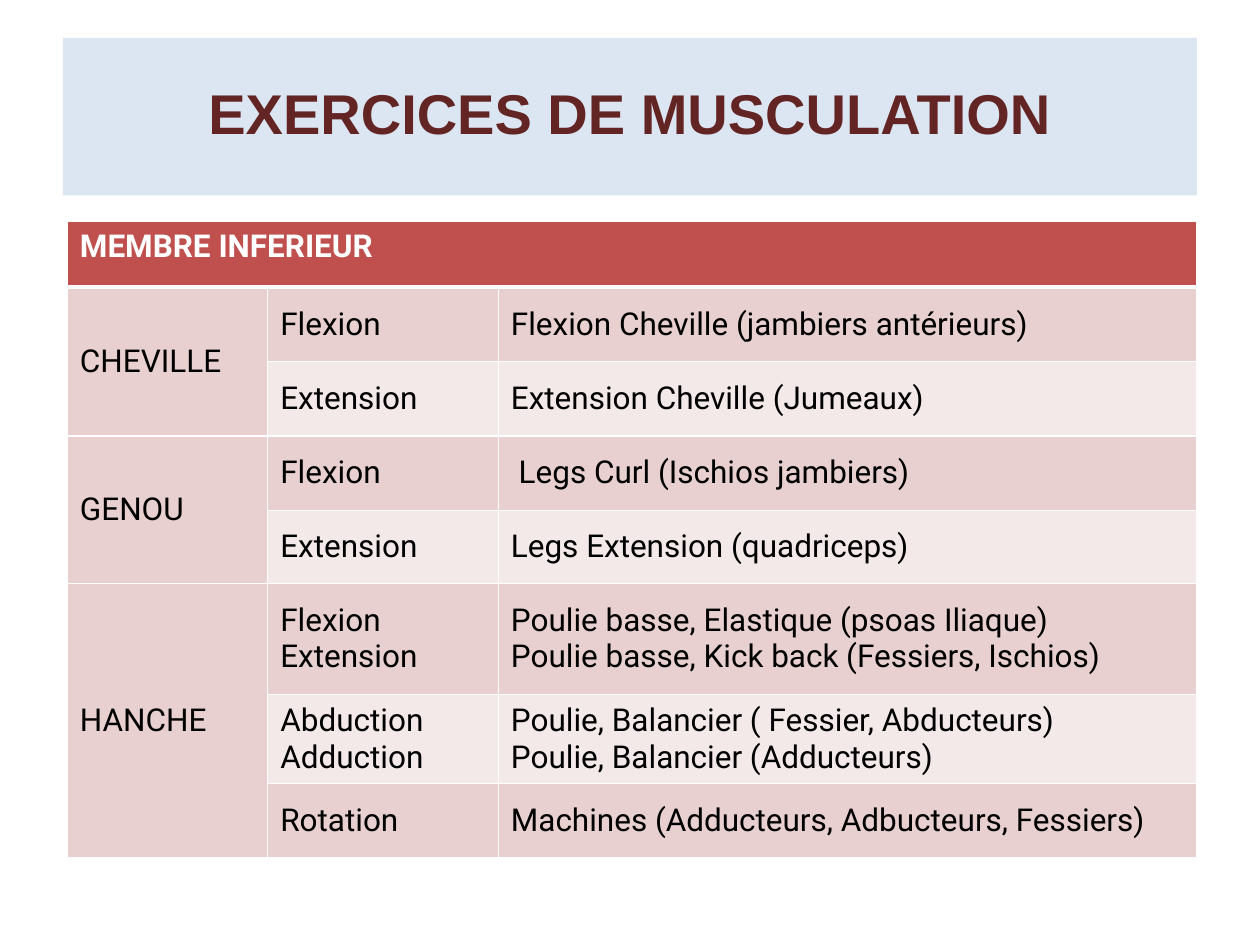
from dataclasses import dataclass

from lxml.etree import SubElement
from pptx import Presentation
from pptx.dml.color import RGBColor
from pptx.enum.shapes import MSO_SHAPE as Shape
from pptx.enum.text import MSO_ANCHOR as Anchor, PP_ALIGN as Align
from pptx.oxml.ns import qn
from pptx.util import Pt


@dataclass(frozen=True)
class Theme:
    """Colours, fonts and type sizes of the slide."""
    banner: str = "DCE6F2"
    title: str = "632523"
    header: str = "C0504D"
    band_dark: str = "E8D0D0"
    band_light: str = "F4E9E9"
    white: str = "FFFFFF"
    black: str = "000000"
    title_font: str = "Arial"
    table_font: str = "Roboto"
    title_size: int = 32
    table_size: int = 18


THEME = Theme()
COLUMN_WIDTHS = (114.5, 131.8, 399)
HEADER_HEIGHT = 37.4
JOINTS = (
    ("CHEVILLE", (
        (42.5, "Flexion", "Flexion Cheville (jambiers antérieurs)"),
        (42.5, "Extension", "Extension Cheville (Jumeaux)"),
    )),
    ("GENOU", (
        (42.5, "Flexion", " Legs Curl (Ischios jambiers)"),
        (41.8, "Extension", "Legs Extension (quadriceps)"),
    )),
    ("HANCHE", (
        (63.4, "Flexion\nExtension",
         "Poulie basse, Elastique (psoas Iliaque)\nPoulie basse, Kick back (Fessiers, Ischios)"),
        (51.1, "Abduction\nAdduction",
         "Poulie, Balancier ( Fessier, Abducteurs)\nPoulie, Balancier (Adducteurs)"),
        (42.5, "Rotation", "Machines (Adducteurs, Adbucteurs, Fessiers)"),
    )),
)


def set_attributes(target, values):
    """Set each named attribute of the target."""
    for name, value in values.items():
        setattr(target, name, value)


def paint(fill, colour):
    """Give a fill one solid colour."""
    fill.solid()
    fill.fore_color.rgb = RGBColor.from_string(colour)


def write(text_frame, text, font, size, colour, bold):
    """Write one formatted paragraph for each line of text."""
    text_frame.text = text
    for paragraph in text_frame.paragraphs:
        set_attributes(paragraph.font, {"name": font, "size": Pt(size), "bold": bold})
        paragraph.font.color.rgb = RGBColor.from_string(colour)


def add_borders(cell, bottom):
    """Draw white lines around a cell, with the given bottom width."""
    properties = cell._tc.get_or_add_tcPr()
    for side, width in {"L": 1, "R": 1, "T": 1, "B": bottom}.items():
        line = SubElement(properties, qn(f"a:ln{side}"), w=str(Pt(width)))
        fill = SubElement(line, qn("a:solidFill"))
        SubElement(fill, qn("a:srgbClr"), val=THEME.white)


def fill_cell(cell, text, fill, colour=THEME.black, bold=False, anchor=Anchor.MIDDLE, bottom=1):
    """Format a table cell and write its text."""
    add_borders(cell, bottom)
    paint(cell.fill, fill)
    set_attributes(cell, {
        "vertical_anchor": anchor,
        "margin_left": Pt(7.2), "margin_right": Pt(7.2),
        "margin_top": Pt(3.6), "margin_bottom": Pt(3.6),
    })
    write(cell.text_frame, text, THEME.table_font, THEME.table_size, colour, bold)


def add_title(slide, left, top, width, height):
    """Place the title banner in its box."""
    banner = slide.shapes.add_shape(Shape.RECTANGLE, Pt(left), Pt(top), Pt(width), Pt(height))
    banner.shadow.inherit = False
    paint(banner.fill, THEME.banner)
    banner.line.fill.background()
    frame = banner.text_frame
    set_attributes(frame, {
        "word_wrap": True, "vertical_anchor": Anchor.MIDDLE,
        "margin_left": 0, "margin_right": 0, "margin_top": 0, "margin_bottom": 0,
    })
    write(frame, "EXERCICES DE MUSCULATION", THEME.title_font, THEME.title_size, THEME.title, True)
    set_attributes(frame.paragraphs[0], {"alignment": Align.CENTER, "line_spacing": 0.9})


def add_exercise_table(slide, left, top):
    """Place the exercise table with one merged cell for each joint."""
    heights = [HEADER_HEIGHT] + [row[0] for _, rows in JOINTS for row in rows]
    table = slide.shapes.add_table(
        len(heights), len(COLUMN_WIDTHS), Pt(left), Pt(top),
        Pt(sum(COLUMN_WIDTHS)), Pt(sum(heights))).table
    for column, width in zip(table.columns, COLUMN_WIDTHS):
        column.width = Pt(width)
    for row, height in zip(table.rows, heights):
        row.height = Pt(height)

    for column in range(len(COLUMN_WIDTHS)):
        fill_cell(table.cell(0, column), "MEMBRE INFERIEUR" if column == 0 else "", THEME.header,
                  THEME.white, True, Anchor.TOP, 3)
    table.cell(0, 0).merge(table.cell(0, len(COLUMN_WIDTHS) - 1))

    first = 1
    for joint, rows in JOINTS:
        for offset, (_, movement, exercise) in enumerate(rows):
            index = first + offset
            band = THEME.band_dark if index % 2 else THEME.band_light
            fill_cell(table.cell(index, 0), "" if offset else joint, THEME.band_dark)
            fill_cell(table.cell(index, 1), movement, band)
            fill_cell(table.cell(index, 2), exercise, band)
        table.cell(first, 0).merge(table.cell(first + len(rows) - 1, 0))
        first += len(rows)


def main():
    """Build the slide and save it."""
    presentation = Presentation()
    set_attributes(presentation, {"slide_width": Pt(720), "slide_height": Pt(540)})
    slide = presentation.slides.add_slide(presentation.slide_layouts[6])
    add_title(slide, 36, 21.6, 648, 90)
    add_exercise_table(slide, 38.5, 126.7)
    presentation.save("out.pptx")


if __name__ == "__main__":
    main()
